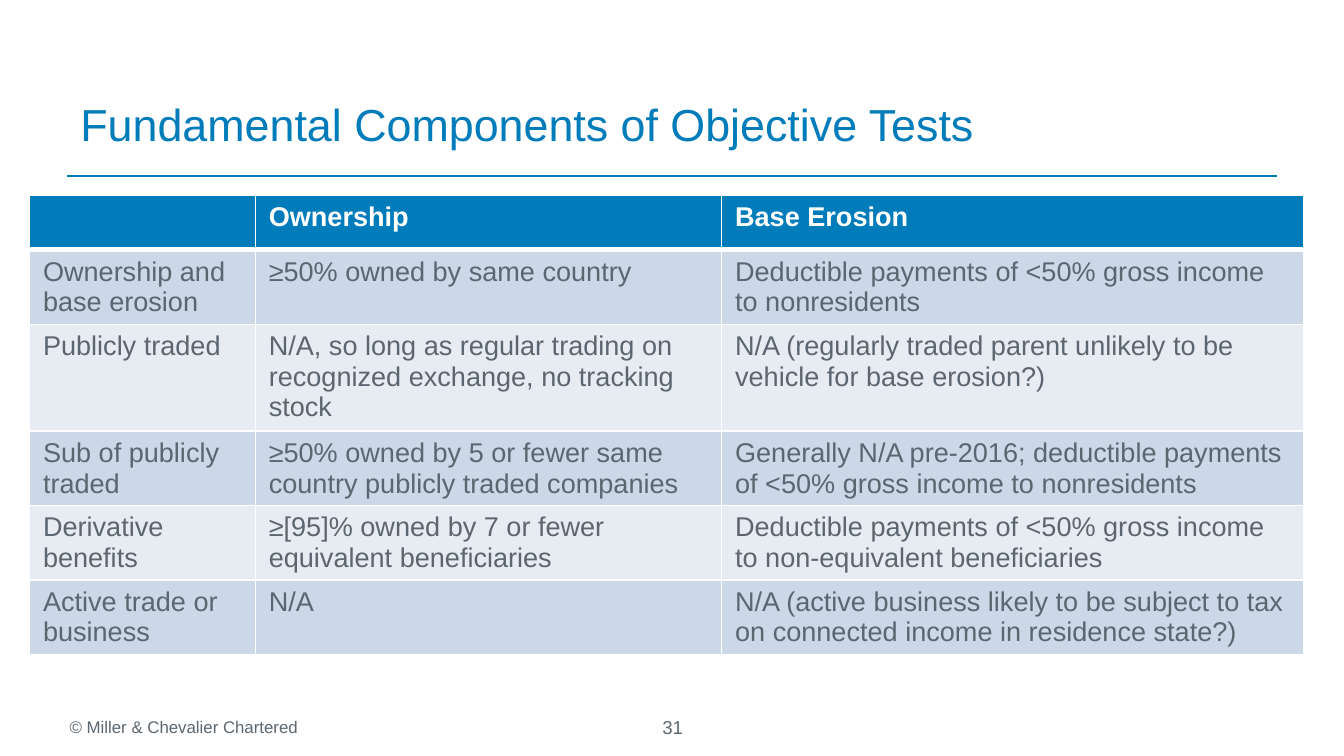
from lxml.etree import SubElement
from pptx import Presentation
from pptx.dml.color import RGBColor
from pptx.enum.shapes import MSO_CONNECTOR as Link
from pptx.enum.text import MSO_ANCHOR as Anchor, PP_ALIGN as Align
from pptx.oxml.ns import qn
from pptx.util import Inches, Pt

BLUE, GRAY, WHITE = "007CBA", "5C6670", "FFFFFF"
BANDS = ["CCD7E7", "E7ECF3"]
ROWS = [
    ["", "Ownership", "Base Erosion"],
    ["Ownership and base erosion", "≥50% owned by same country",
     "Deductible payments of <50% gross income to nonresidents"],
    ["Publicly traded",
     "N/A, so long as regular trading on recognized exchange, no tracking stock",
     "N/A (regularly traded parent unlikely to be vehicle for base erosion?)"],
    ["Sub of publicly traded",
     "≥50% owned by 5 or fewer same country publicly traded companies",
     "Generally N/A pre-2016; deductible payments of <50% gross income to nonresidents"],
    ["Derivative benefits",
     "≥[95]% owned by 7 or fewer equivalent beneficiaries",
     "Deductible payments of <50% gross income to non-equivalent beneficiaries"],
    ["Active trade or business", "N/A",
     "N/A (active business likely to be subject to tax on connected income in residence state?)"],
]


def color(code):
    return RGBColor.from_string(code)


def write(frame, text, size=14.5, ink=GRAY, bold=False, align=Align.LEFT):
    para = frame.paragraphs[0]
    para.alignment = align
    if not text:
        return
    run = para.add_run()
    run.text = text
    font = run.font
    font.name, font.size, font.bold = "Arial", Pt(size), bold
    font.color.rgb = color(ink)


def edge(cell, side, width):
    line = SubElement(cell._tc.get_or_add_tcPr(), qn(f"a:ln{side}"), w=str(Pt(width)))
    fill = SubElement(line, qn("a:solidFill"))
    SubElement(fill, qn("a:srgbClr"), val=WHITE)


class Page:
    def __init__(self, slide):
        self.shapes = slide.shapes

    def text(self, box, text, anchor=Anchor.TOP, wrap=True, **style):
        frame = self.shapes.add_textbox(*map(Inches, box)).text_frame
        frame.word_wrap = wrap
        frame.vertical_anchor = anchor
        write(frame, text, **style)

    def rule(self, left, right, top):
        line = self.shapes.add_connector(
            Link.STRAIGHT, *map(Inches, (left, top, right, top)))
        line.line.color.rgb = color(BLUE)
        line.line.width = Pt(1)
        SubElement(line._element.spPr, qn("a:effectLst"))

    def table(self, left, top, cols, high, rows):
        size = map(Inches, (left, top, sum(cols), high * len(rows)))
        grid = self.shapes.add_table(len(rows), len(cols), *size).table
        for col, width in zip(grid.columns, cols):
            col.width = Inches(width)
        for r, row in enumerate(rows):
            grid.rows[r].height = Inches(high)
            for c, text in enumerate(row):
                self.cell(grid.cell(r, c), text, r)

    def cell(self, cell, text, row):
        head = row == 0
        write(cell.text_frame, text, ink=WHITE if head else GRAY, bold=head)
        cell.margin_bottom = Inches(0.02)
        for side in "LRTB":
            thick = (head and side == "B") or (row == 1 and side == "T")
            edge(cell, side, 3 if thick else 1)
        cell.fill.solid()
        cell.fill.fore_color.rgb = color(BLUE if head else BANDS[(row - 1) % 2])


def main():
    deck = Presentation()
    deck.slide_width, deck.slide_height = Inches(10), Inches(10 * 9 / 16)
    page = Page(deck.slides.add_slide(deck.slide_layouts[6]))
    page.rule(0.5, 9.5, 1.31)
    page.text((0.42, 5.28, 1.91, 0.25), "© Miller & Chevalier Chartered",
              wrap=False, size=9)
    page.text((3.83, 5.28, 2.35, 0.27), "31", size=10, align=Align.CENTER)
    page.text((0.5, 0.23, 9, 0.94), "Fundamental Components of Objective Tests",
              anchor=Anchor.BOTTOM, size=24, ink=BLUE)
    page.table(0.22, 1.45, [1.68, 3.47, 4.33], 0.41, ROWS)
    deck.save("out.pptx")


if __name__ == "__main__":
    main()
